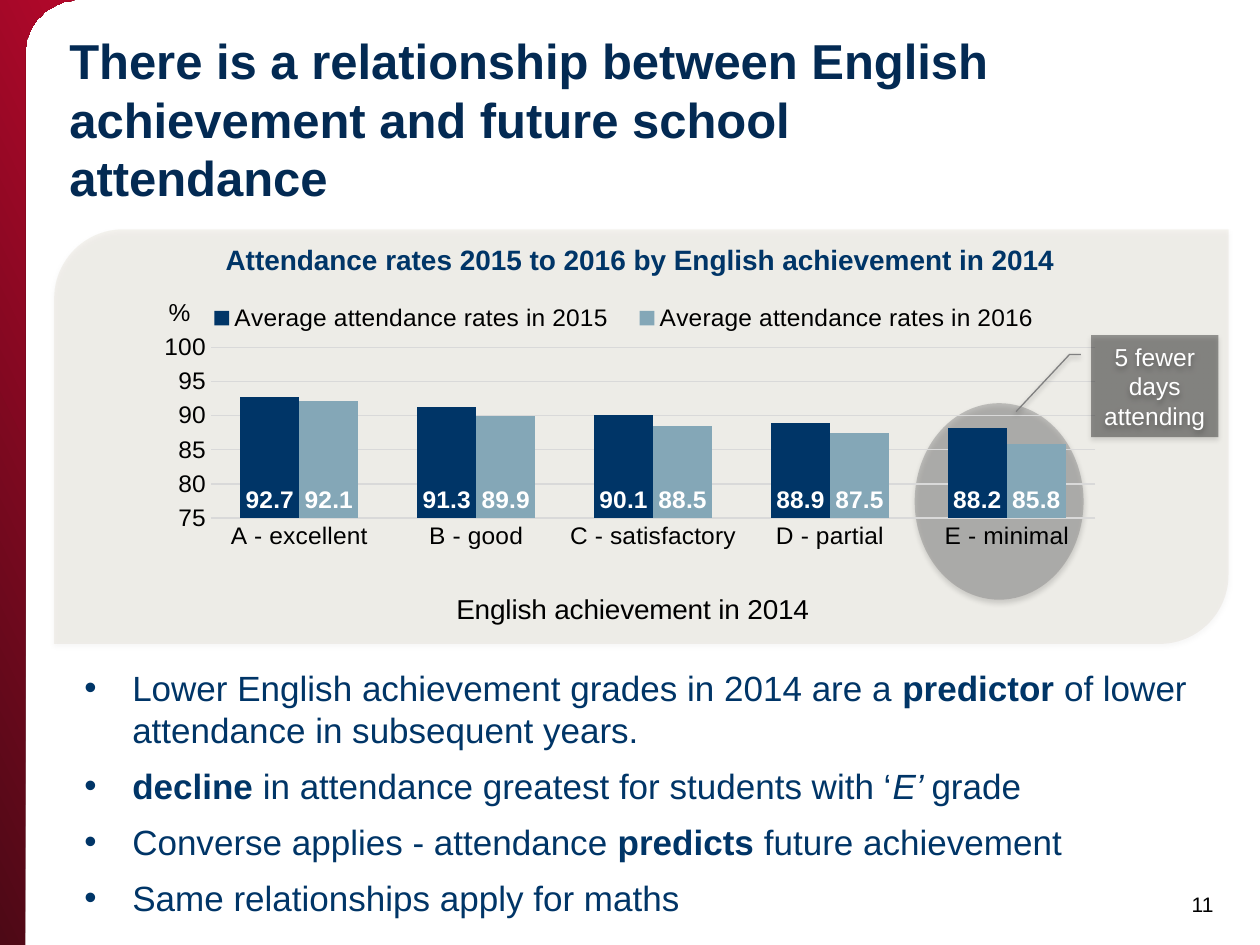
"""Build the slide on English achievement and school attendance."""
import math
from dataclasses import dataclass

import lxml.etree
import pptx
import pptx.chart.data
import pptx.dml.color
import pptx.enum.chart
import pptx.enum.shapes
import pptx.enum.text
import pptx.oxml
import pptx.oxml.ns
import pptx.util

RGB = pptx.dml.color.RGBColor
Pt = pptx.util.Pt
qn = pptx.oxml.ns.qn
Kind = pptx.enum.shapes.MSO_SHAPE
Align = pptx.enum.text.PP_ALIGN
Anchor = pptx.enum.text.MSO_ANCHOR

BLACK = RGB(0x00, 0x00, 0x00)
WHITE = RGB(0xFF, 0xFF, 0xFF)
NAVY = RGB(0x00, 0x35, 0x67)
INK = RGB(0x03, 0x2A, 0x53)
STEEL = RGB(0x84, 0xA7, 0xB7)
GREY = RGB(0x80, 0x80, 0x80)
PALE = RGB(0xD9, 0xD9, 0xD9)
SAND = RGB(0xA3, 0x94, 0x68)
WINE = RGB(0x4D, 0x09, 0x16)
RED = RGB(0xB4, 0x08, 0x2B)

SCALE = 9144
FACE = "Arial"


@dataclass
class Box:
    left: int
    top: int
    width: int
    height: int

    def emu(self) -> tuple:
        return tuple(n * SCALE for n in (self.left, self.top, self.width, self.height))


@dataclass
class Style:
    size: int
    color: RGB
    bold: bool = False
    align: Align = Align.LEFT


@dataclass
class Panel:
    kind: Kind
    box: Box
    color: RGB
    alpha: int


@dataclass
class Label:
    text: str
    box: Box
    style: Style


@dataclass
class Series:
    name: str
    values: tuple
    color: RGB


@dataclass
class Run:
    text: str
    bold: bool = False
    italic: bool = False


PANEL = Panel(Kind.ROUND_2_DIAG_RECTANGLE, Box(43, 182, 932, 329), SAND, 10)
RING = Panel(Kind.OVAL, Box(726, 320, 134, 156), GREY, 42)
NOTE = Panel(Kind.LINE_CALLOUT_2_NO_BORDER, Box(866, 266, 101, 81), BLACK, 37)

HEAD = Label("Attendance rates 2015 to 2016 by English achievement in 2014",
             Box(157, 188, 702, 37), Style(16, NAVY, True, Align.CENTER))
UNIT = Label("%", Box(124, 231, 43, 34), Style(14, BLACK))
PAGE = Label("11", Box(936, 703, 45, 30), Style(12, BLACK))

GRADES = ("A - excellent", "B - good", "C - satisfactory", "D - partial", "E - minimal")
RATES = (
    Series("Average attendance rates in 2015", (92.7, 91.3, 90.1, 88.9, 88.2), NAVY),
    Series("Average attendance rates in 2016", (92.1, 89.9, 88.5, 87.5, 85.8), STEEL),
)

POINTS = (
    (Run("Lower English achievement grades in 2014 are a "), Run("predictor", True),
     Run(" of lower attendance in subsequent years.")),
    (Run("decline ", True), Run("in attendance greatest for students with ‘"),
     Run("E’ ", italic=True), Run("grade")),
    (Run("Converse applies - attendance "), Run("predicts ", True), Run("future achievement")),
    (Run("Same relationships apply for maths"),),
)


def set_font(font, style: Style) -> None:
    font.name, font.size, font.bold = FACE, Pt(style.size), style.bold
    font.color.rgb = style.color


def set_text(frame, text: str, style: Style) -> None:
    frame.word_wrap = True
    frame.text = text
    para = frame.paragraphs[0]
    para.alignment = style.align
    set_font(para.font, style)


def clear_pad(frame) -> None:
    frame.margin_left = frame.margin_right = frame.margin_top = frame.margin_bottom = 0


def add_node(base, tag: str, **attrs):
    return lxml.etree.SubElement(base, qn(tag), **attrs)


def add_title(slide) -> None:
    title = slide.shapes.title
    title.left, title.top, title.width, title.height = Box(55, 24, 748, 98).emu()
    frame = title.text_frame
    clear_pad(frame)
    frame.vertical_anchor = Anchor.TOP
    frame.auto_size = pptx.enum.text.MSO_AUTO_SIZE.NONE
    set_text(frame, "There is a relationship between English achievement "
             "and future school attendance", Style(28, INK, True))


def add_edge(slide) -> None:
    turns = [math.radians(a) for a in range(0, 91, 5)]
    arc = [(round(63 - 43 * math.sin(a)), round(43 - 43 * math.cos(a))) for a in turns]
    pen = slide.shapes.build_freeform(0, 0, scale=SCALE)
    pen.add_line_segments([*arc, (20, 750), (0, 750)], close=True)
    edge = pen.convert_to_shape()
    edge.shadow.inherit = False
    edge.line.fill.background()
    edge.fill.gradient()
    edge.fill.gradient_angle = 26
    for stop, color, spot in zip(edge.fill.gradient_stops, (WINE, RED), (0, 1)):
        stop.color.rgb = color
        stop.position = spot


def add_panel(slide, panel: Panel):
    shape = slide.shapes.add_shape(panel.kind, *panel.box.emu())
    shape.fill.solid()
    shape.fill.fore_color.rgb = panel.color
    shape.line.fill.background()
    shape.shadow.inherit = False
    props = shape.element.spPr
    color = props.find(qn("a:solidFill"))[0]
    add_node(color, "a:alpha", val=str(panel.alpha * 1000))
    shade = add_node(props.find(qn("a:effectLst")), "a:outerShdw", blurRad="40000",
                     dist="23000", dir="5400000", rotWithShape="0")
    tint = add_node(shade, "a:srgbClr", val=str(BLACK))
    add_node(tint, "a:alpha", val="35000")
    return shape


def add_note(slide) -> None:
    note = add_panel(slide, NOTE)
    for index, value in enumerate((0.19, -0.08, 0.19, -0.17, 0.75, -0.59)):
        note.adjustments[index] = value
    note.line.color.rgb = GREY
    note.line.width = Pt(0.75)
    note.text_frame.vertical_anchor = Anchor.MIDDLE
    set_text(note.text_frame, "5 fewer days attending", Style(14, WHITE, align=Align.CENTER))


def add_label(slide, label: Label) -> None:
    set_text(slide.shapes.add_textbox(*label.box.emu()).text_frame, label.text, label.style)


def place(base, index: int, **spots: float) -> None:
    for old in base.findall(qn("c:layout")):
        base.remove(old)
    layout = lxml.etree.Element(qn("c:layout"))
    base.insert(index, layout)
    manual = add_node(layout, "c:manualLayout")
    if index == 0:
        add_node(manual, "c:layoutTarget", val="inner")
    for key in "xy":
        add_node(manual, f"c:{key}Mode", val="edge")
    for key, value in spots.items():
        add_node(manual, f"c:{key}", val=str(value))


def set_axis(axis) -> None:
    marks = pptx.enum.chart.XL_TICK_MARK
    axis.major_tick_mark = axis.minor_tick_mark = marks.NONE
    set_font(axis.tick_labels.font, Style(14, BLACK))
    axis._element.find(qn("c:txPr")).find(qn("a:bodyPr")).set("rot", "-60000000")


def add_rates(slide) -> None:
    data = pptx.chart.data.CategoryChartData(number_format="0.0")
    data.categories = GRADES
    for rate in RATES:
        data.add_series(rate.name, rate.values)
    kind = pptx.enum.chart.XL_CHART_TYPE.COLUMN_CLUSTERED
    chart = slide.shapes.add_chart(kind, *Box(114, 224, 763, 278).emu(), data).chart
    set_font(chart.font, Style(10, BLACK))
    chart.has_title = False
    chart.has_legend = True
    legend = chart.legend
    legend.position = pptx.enum.chart.XL_LEGEND_POSITION.TOP
    legend.include_in_layout = False
    set_font(legend.font, Style(14, BLACK))

    plot = chart.plots[0]
    plot.gap_width, plot.overlap, plot.vary_by_categories = 100, 0, False
    for series, rate in zip(plot.series, RATES):
        series.format.fill.solid()
        series.format.fill.fore_color.rgb = rate.color
        marks = series.data_labels
        marks.show_value = True
        marks.position = pptx.enum.chart.XL_LABEL_POSITION.INSIDE_BASE
        marks.number_format, marks.number_format_is_linked = "0.0", False
        set_font(marks.font, Style(14, WHITE, True))

    cats, vals = chart.category_axis, chart.value_axis
    set_axis(cats)
    set_axis(vals)
    vals.minimum_scale, vals.maximum_scale, vals.major_unit = 75, 100, 5
    vals.tick_labels.number_format = "0"
    vals.tick_labels.number_format_is_linked = False
    vals.format.line.fill.background()
    for line in (cats.format.line, vals.major_gridlines.format.line):
        line.color.rgb = PALE
        line.width = Pt(0.75)
    set_text(cats.axis_title.text_frame, "English achievement in 2014", Style(16, BLACK))

    area = chart.element.chart.plotArea
    place(area, 0, x=0.07, y=0.19, w=0.92, h=0.5)
    place(legend._element, 1, x=0.05, y=0.05, w=0.9, h=0.11)
    place(cats.axis_title._element, 1, x=0.32, y=0.89)


def add_points(slide) -> None:
    frame = slide.shapes.add_textbox(*Box(67, 529, 900, 235).emu()).text_frame
    frame.word_wrap = True
    clear_pad(frame)
    for index, runs in enumerate(POINTS):
        para = frame.add_paragraph() if index else frame.paragraphs[0]
        props = para._p.get_or_add_pPr()
        props.set("marL", str(38 * SCALE))
        props.set("indent", str(-38 * SCALE))
        add_node(props, "a:buFont", typeface=FACE)
        add_node(props, "a:buChar", char="•")
        para.space_before = Pt(4 if index else 0)
        para.space_after = Pt(4)
        set_font(para.font, Style(20, NAVY))
        for part in runs:
            run = para.add_run()
            run.text = part.text
            if part.bold:
                run.font.bold = True
            if part.italic:
                run.font.italic = True


def main() -> None:
    deck = pptx.Presentation()
    deck.slide_width, deck.slide_height = 1000 * SCALE, 750 * SCALE
    slide = deck.slides.add_slide(deck.slide_layouts[5])
    add_edge(slide)
    add_label(slide, PAGE)
    add_title(slide)
    add_panel(slide, PANEL)
    add_panel(slide, RING)
    add_rates(slide)
    add_label(slide, HEAD)
    add_note(slide)
    add_points(slide)
    add_label(slide, UNIT)
    deck.save("out.pptx")


if __name__ == "__main__":
    main()
